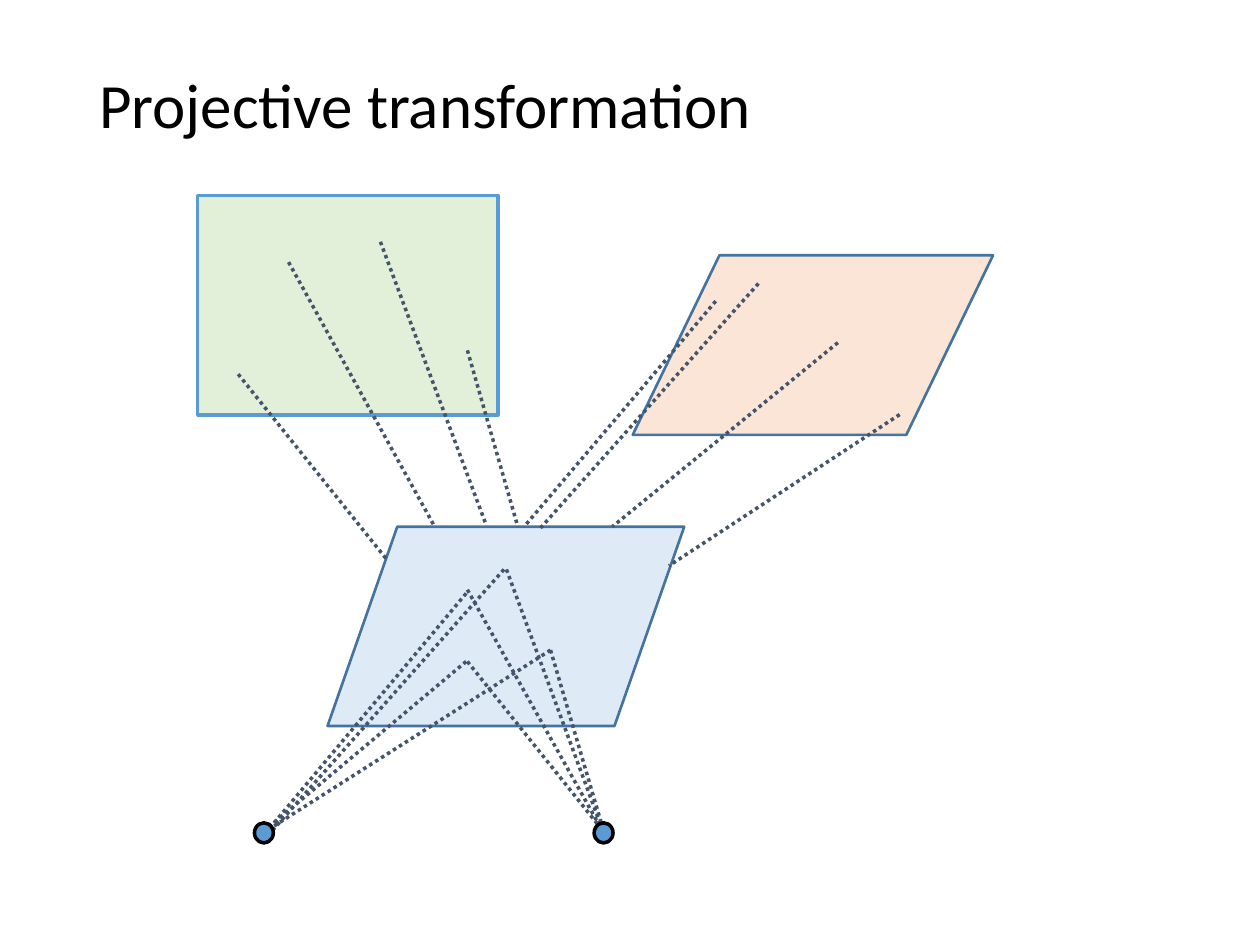
import pptx
import pptx.util
import pptx.dml.color
import pptx.enum.dml
import pptx.enum.shapes
import pptx.enum.text
import pptx.oxml.ns
import lxml.etree

Pt = pptx.util.Pt
Kind = pptx.enum.shapes.MSO_SHAPE
COLORS = {
    "green": "E2F0D9", "orange": "FBE5D6", "pale": "DEEBF7",
    "blue": "5B9BD5", "edge": "43739E", "ray": "44546A", "black": "000000",
}


def color(name):
    return pptx.dml.color.RGBColor.from_string(COLORS[name])


def add_form(kind, box, fill, edge, width, skew=None):
    form = slide.shapes.add_shape(kind, *map(Pt, box))
    form.shadow.inherit = False
    form.fill.solid()
    form.fill.fore_color.rgb = color(fill)
    form.line.color.rgb = color(edge)
    form.line.width = Pt(width)
    if skew is not None:
        form.adjustments[0] = skew


deck = pptx.Presentation()
deck.slide_width, deck.slide_height = Pt(720), Pt(540)
slide = deck.slides.add_slide(deck.slide_layouts[5])

# Title
title = slide.shapes.title
title.left, title.top, title.width, title.height = map(Pt, (49.5, 29.5, 621, 65))
frame = title.text_frame
frame.word_wrap = True
frame.vertical_anchor = pptx.enum.text.MSO_ANCHOR.MIDDLE
para = frame.paragraphs[0]
para.alignment = pptx.enum.text.PP_ALIGN.LEFT
para.line_spacing = 0.9
run = para.add_run()
run.text = "Projective transformation"
run.font.name = "Calibri"
run.font.size = Pt(36)
run.font.color.rgb = color("black")

# Planes: two views and the plane in front of the eyes
add_form(Kind.PARALLELOGRAM, (361.6, 145.9, 205.9, 102.6), "orange", "edge", 1.5, 0.483)
add_form(Kind.RECTANGLE, (113, 111.8, 171.6, 125.3), "green", "blue", 2)
add_form(Kind.PARALLELOGRAM, (187.2, 301, 203.8, 113.8), "pale", "edge", 1.5, 0.35)

# Rays, each as start x, y and end x, y
left_view = [
    (136.1, 213.8, 221, 319.7), (164.9, 149.8, 248.4, 301),
    (217.4, 138.2, 277.9, 300.2), (267.1, 200.2, 295.9, 301),
]
right_eye = [
    (267.1, 378, 344.9, 475.2), (267.1, 337, 344.9, 475.9),
    (289.4, 325.4, 344.9, 475.9), (314.6, 371.5, 344.2, 472.3),
]
left_eye = [
    (266.4, 378, 150.5, 475.2), (266.4, 339.1, 151.9, 475.9),
    (288, 325.4, 151.9, 478.8), (314.6, 371.5, 150.5, 475.9),
]
right_view = [
    (433.4, 162, 308.9, 301.7), (409, 172.1, 299.5, 301),
    (478.8, 195.8, 349.9, 301), (514.1, 236.9, 382.3, 323.3),
]

# Draw each group of rays, then the eye that covers its ends
groups = [(left_view + right_eye, 339.5), (left_eye, 145.4), (right_view, None)]
for rays, eye in groups:
    for ray in rays:
        line = slide.shapes.add_connector(
            pptx.enum.shapes.MSO_CONNECTOR.STRAIGHT, *map(Pt, ray))
        line.line.color.rgb = color("ray")
        line.line.width = Pt(2)
        line.line.dash_style = pptx.enum.dml.MSO_LINE.ROUND_DOT
        props = line._element.spPr
        lxml.etree.SubElement(props, pptx.oxml.ns.qn("a:effectLst"))
    if eye is not None:
        add_form(Kind.OVAL, (eye, 470.2, 10.8, 11.5), "blue", "black", 2)

deck.save("out.pptx")
